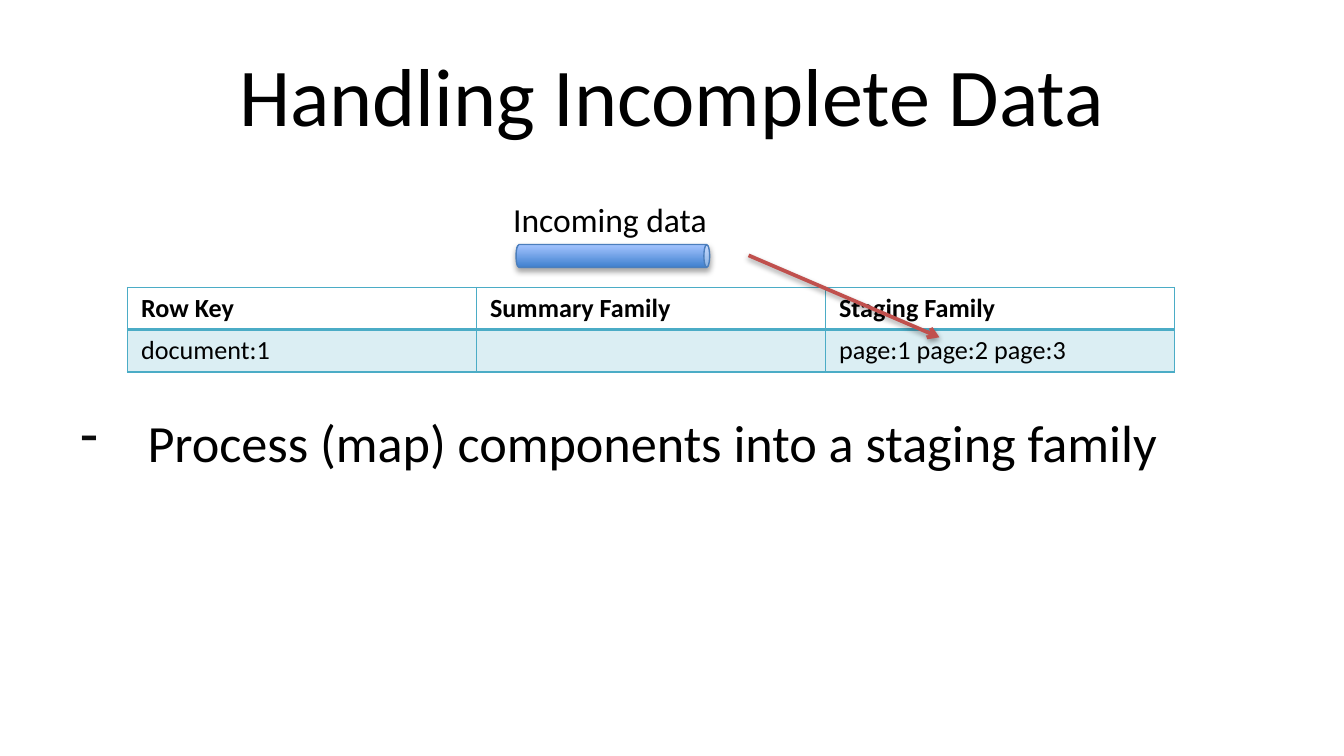
from dataclasses import dataclass

from lxml import etree
from pptx import Presentation
from pptx.dml.color import RGBColor
from pptx.enum.shapes import MSO_CONNECTOR as Connector, MSO_SHAPE as Shape
from pptx.enum.text import MSO_ANCHOR as Anchor, PP_ALIGN as Align
from pptx.oxml import parse_xml
from pptx.oxml.ns import nsdecls, qn
from pptx.util import Inches, Pt


@dataclass(frozen=True)
class Theme:
    font: str = "Calibri"
    text: str = "000000"
    bullet: str = "0D0D0D"
    table: str = "4BACC6"
    arrow: str = "C0504D"
    pipe_dark: str = "3F80CE"
    pipe_light: str = "A4C4FF"
    pipe_line: str = "4B7EBC"
    title_size: int = 44
    body_size: int = 28
    label_size: int = 18
    table_size: int = 14


THEME = Theme()


def color(value):
    return RGBColor.from_string(value)


def style(para, size, bold=False):
    para.font.name = THEME.font
    para.font.size = Pt(size)
    para.font.bold = bold
    para.font.color.rgb = color(THEME.text)


def add_text(page, box, text, size, align=Align.LEFT, anchor=Anchor.TOP, wrap=True):
    frame = page.shapes.add_textbox(*map(Inches, box)).text_frame
    frame.word_wrap = wrap
    frame.vertical_anchor = anchor
    para = frame.paragraphs[0]
    para.text = text
    para.alignment = align
    style(para, size)
    return para


def add_shadow(shape, alpha, distance):
    properties = shape._element.spPr
    for effects in properties.findall(qn("a:effectLst")):
        properties.remove(effects)
    properties.append(parse_xml(
        f'<a:effectLst {nsdecls("a")}>'
        f'<a:outerShdw blurRad="{Pt(3.1)}" dist="{Pt(distance)}" dir="5400000" rotWithShape="0">'
        f'<a:srgbClr val="000000"><a:alpha val="{alpha * 1000}"/></a:srgbClr>'
        f'</a:outerShdw></a:effectLst>'))


def add_title(page, box):
    add_text(page, box, "Handling Incomplete Data", THEME.title_size, Align.CENTER, Anchor.MIDDLE)


def add_borders(cell, widths):
    properties = cell._tc.get_or_add_tcPr()
    for index, (side, width) in enumerate(widths.items()):
        properties.insert(index, parse_xml(
            f'<a:ln{side} {nsdecls("a")} w="{Pt(width)}"><a:solidFill>'
            f'<a:srgbClr val="{THEME.table}"/></a:solidFill></a:ln{side}>'))


def add_family_table(page, box):
    rows = [
        ["Row Key", "Summary Family", "Staging Family"],
        ["document:1", "", "page:1 page:2 page:3"],
    ]
    table = page.shapes.add_table(len(rows), len(rows[0]), *map(Inches, box)).table
    table.first_row = table.horz_banding = False
    for row_index, row in enumerate(rows):
        header = row_index == 0
        for column_index, text in enumerate(row):
            cell = table.cell(row_index, column_index)
            cell.text = text
            cell.margin_left = cell.margin_right = Inches(0.1)
            cell.margin_top = cell.margin_bottom = Inches(0.04)
            style(cell.text_frame.paragraphs[0], THEME.table_size, header)
            if header:
                cell.fill.background()
            else:
                cell.fill.solid()
                cell.fill.fore_color.rgb = color(THEME.table)
                tint = cell._tc.tcPr.find(".//" + qn("a:srgbClr"))
                etree.SubElement(tint, qn("a:alpha")).set("val", "20000")
            add_borders(cell, {"L": 1, "R": 1, "T": 1 if header else 2, "B": 2 if header else 1})


def add_pipe(page, box):
    left, top, length, thickness = box
    inset = (length - thickness) / 2
    pipe = page.shapes.add_shape(
        Shape.CAN, Inches(left + inset), Inches(top - inset), Inches(thickness), Inches(length))
    pipe.rotation = 90
    pipe.fill.gradient()
    stops = zip(pipe.fill.gradient_stops, (THEME.pipe_dark, THEME.pipe_light))
    for position, (stop, value) in enumerate(stops):
        stop.color.rgb = color(value)
        stop.position = position
    gradient = pipe._element.spPr.find(qn("a:gradFill"))
    gradient.set("rotWithShape", "0")
    gradient.find(qn("a:lin")).set("ang", str(270 * 60000))
    pipe.line.color.rgb = color(THEME.pipe_line)
    pipe.line.width = Pt(0.75)
    add_shadow(pipe, 35, 1.8)


def add_arrow(page, box):
    left, top, width, height = box
    arrow = page.shapes.add_connector(
        Connector.STRAIGHT, *map(Inches, (left, top, left + width, top + height)))
    arrow.line.color.rgb = color(THEME.arrow)
    arrow.line.width = Pt(2)
    etree.SubElement(arrow.line._get_or_add_ln(), qn("a:tailEnd")).set("type", "arrow")
    add_shadow(arrow, 38, 1.6)


def add_incoming_data(page, box):
    left, top, width, height = box
    add_pipe(page, (left + 0.12, top + 0.39, 1.44, 0.17))
    add_arrow(page, (left + 1.85, top + 0.47, width - 1.85, height - 0.47))
    add_text(page, (left, top, 1.67, 0.4), "Incoming data", THEME.label_size, wrap=False)


def add_body(page, box):
    para = add_text(page, box, "Process (map) components into a staging family", THEME.body_size)
    para.space_before = Pt(0.2 * THEME.body_size)
    properties = para._p.get_or_add_pPr()
    properties.set("marL", str(Inches(0.5)))
    properties.set("indent", str(Inches(-0.5)))
    bullet_color = etree.SubElement(properties, qn("a:buClr"))
    etree.SubElement(bullet_color, qn("a:srgbClr")).set("val", THEME.bullet)
    etree.SubElement(properties, qn("a:buFontTx"))
    etree.SubElement(properties, qn("a:buChar")).set("char", "-")
    properties.append(properties.find(qn("a:defRPr")))


def main():
    deck = Presentation()
    deck.slide_width = Inches(10)
    deck.slide_height = deck.slide_width * 9 // 16
    page = deck.slides.add_slide(deck.slide_layouts[6])
    add_title(page, (0.5, 0.23, 9, 0.94))
    add_family_table(page, (0.95, 2.14, 7.79, 0.62))
    add_incoming_data(page, (3.72, 1.43, 3.27, 1.08))
    add_body(page, (0.5, 3, 9, 2.03))
    deck.save("out.pptx")


if __name__ == "__main__":
    main()
